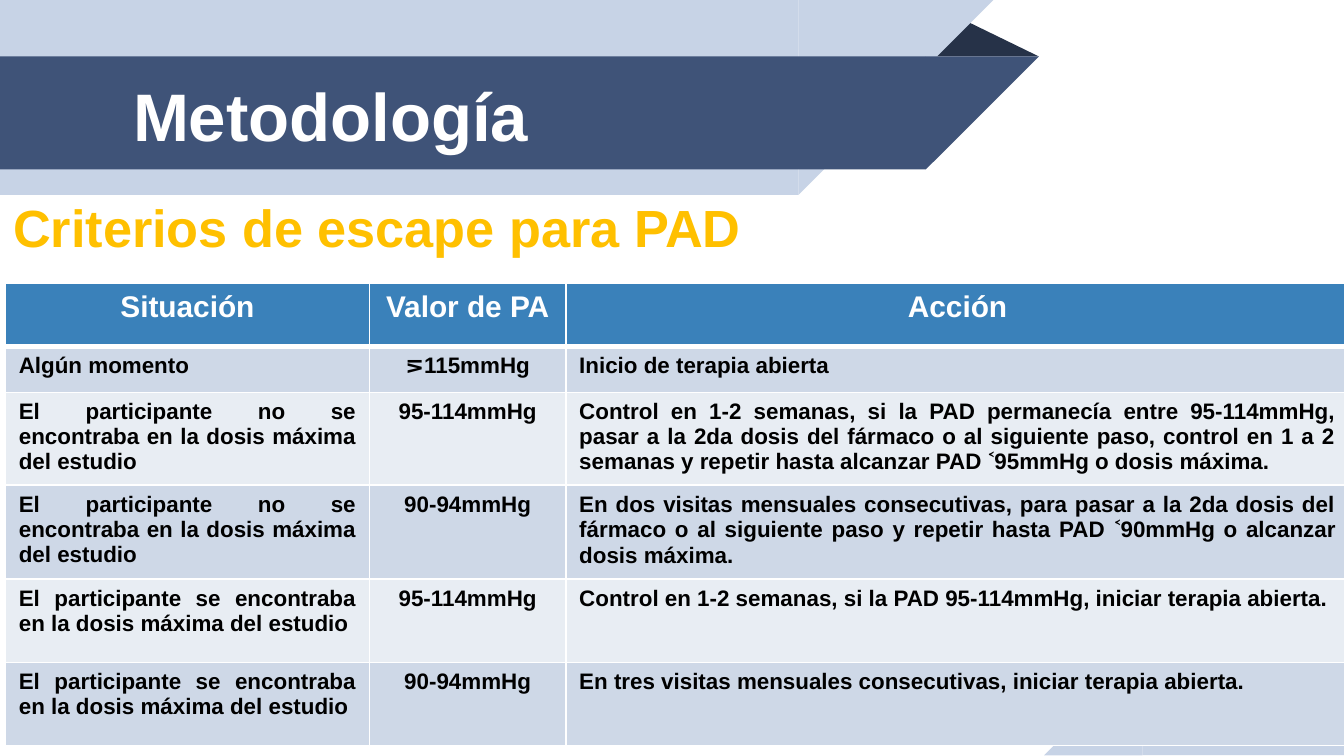
from lxml.etree import SubElement
from pptx import Presentation
from pptx.dml.color import RGBColor
from pptx.enum.shapes import MSO_SHAPE
from pptx.enum.text import MSO_ANCHOR, MSO_AUTO_SIZE, PP_ALIGN
from pptx.oxml.ns import qn
from pptx.util import Inches, Pt

WHITE = RGBColor(0xFF, 0xFF, 0xFF)
BLACK = RGBColor(0, 0, 0)
GOLD = RGBColor(0xFF, 0xC0, 0x00)
LIGHT_BLUE = RGBColor(0xC7, 0xD3, 0xE6)
DARK_BLUE = RGBColor(0x3F, 0x53, 0x78)
FOLD_BLUE = RGBColor(0x26, 0x32, 0x48)
HEADER_BLUE = RGBColor(0x3A, 0x81, 0xBA)
ROW_FILLS = (RGBColor(0xCE, 0xD8, 0xE7), RGBColor(0xE8, 0xED, 0xF3))

TITLE = "Metodología"
SUBTITLE = "Criterios de escape para PAD"
LESS_THAN = "˂"
BELOW_MAXIMUM = "El participante no se encontraba en la dosis máxima del estudio"
AT_MAXIMUM = "El participante se encontraba en la dosis máxima del estudio"
HEADER = ("Situación", "Valor de PA", "Acción")
CRITERIA = [
    ("Algún momento", "⋝115mmHg", "Inicio de terapia abierta"),
    (BELOW_MAXIMUM, "95-114mmHg",
     "Control en 1-2 semanas, si la PAD permanecía entre 95-114mmHg, pasar a la "
     "2da dosis del fármaco o al siguiente paso, control en 1 a 2 semanas y "
     "repetir hasta alcanzar PAD ˂95mmHg o dosis máxima."),
    (BELOW_MAXIMUM, "90-94mmHg",
     "En dos visitas mensuales consecutivas, para pasar a la 2da dosis del "
     "fármaco o al siguiente paso y repetir hasta PAD ˂90mmHg o alcanzar "
     "dosis máxima."),
    (AT_MAXIMUM, "95-114mmHg",
     "Control en 1-2 semanas, si la PAD 95-114mmHg, iniciar terapia abierta."),
    (AT_MAXIMUM, "90-94mmHg",
     "En tres visitas mensuales consecutivas, iniciar terapia abierta."),
]
COLUMN_WIDTHS = (2.71, 1.46, 5.83)
ROW_HEIGHTS = (0.47, 0.34, 0.69, 0.7, 0.62, 0.62)


def add_plain_shape(slide, kind, left, top, width, height, color):
    shape = slide.shapes.add_shape(
        kind, Inches(left), Inches(top), Inches(width), Inches(height))
    shape.shadow.inherit = False
    shape.fill.solid()
    shape.fill.fore_color.rgb = color
    shape.line.fill.background()
    return shape


def add_ribbon(slide, left, top, width, height, color, slant_at_right):
    """Draw a band whose slanted end is a right triangle as wide as it is high."""
    triangle_left = left + width if slant_at_right else left - height
    add_plain_shape(slide, MSO_SHAPE.RECTANGLE, left, top, width, height, color)
    triangle = add_plain_shape(slide, MSO_SHAPE.RIGHT_TRIANGLE,
                               triangle_left, top, height, height, color)
    triangle.element.spPr.xfrm.set("flipH", "1")
    if slant_at_right:
        triangle.rotation = 180


def set_font(paragraph, size, color):
    font = paragraph.font
    font.name, font.size, font.bold = "Arial", Pt(size), True
    font.color.rgb = color


def fill_heading(shape, text, size, color):
    frame = shape.text_frame
    frame.text = text
    frame.word_wrap = True
    frame.auto_size = MSO_AUTO_SIZE.NONE
    frame.vertical_anchor = MSO_ANCHOR.MIDDLE
    frame.margin_left = frame.margin_right = Inches(0.1)
    frame.margin_top = frame.margin_bottom = Inches(0.1)
    paragraph = frame.paragraphs[0]
    paragraph.alignment = PP_ALIGN.LEFT
    set_font(paragraph, size, color)


def set_borders(cell, bottom_width):
    properties = cell._tc.get_or_add_tcPr()
    for side, width in (("L", 1), ("R", 1), ("T", 1), ("B", bottom_width)):
        line = SubElement(properties, qn(f"a:ln{side}"), w=str(Pt(width)))
        fill = SubElement(line, qn("a:solidFill"))
        SubElement(fill, qn("a:srgbClr"), val=str(WHITE))


def fill_cell(cell, text, size, color, fill, alignment):
    cell.fill.solid()
    cell.fill.fore_color.rgb = fill
    paragraph = cell.text_frame.paragraphs[0]
    paragraph.alignment = alignment
    set_font(paragraph, size, color)
    before, sign, after = text.partition(LESS_THAN)
    for part in filter(None, (before, sign, after)):
        run = paragraph.add_run()
        run.text = part
        run.font.name = "Cambria" if part == LESS_THAN else "Arial"


def add_criteria_table(slide):
    table = slide.shapes.add_table(
        len(ROW_HEIGHTS), len(COLUMN_WIDTHS), Inches(0.04), Inches(2.11),
        Inches(sum(COLUMN_WIDTHS)), Inches(sum(ROW_HEIGHTS))).table
    for column, width in zip(table.columns, COLUMN_WIDTHS):
        column.width = Inches(width)
    for row, height in zip(table.rows, ROW_HEIGHTS):
        row.height = Inches(height)
    for column, text in enumerate(HEADER):
        cell = table.cell(0, column)
        set_borders(cell, bottom_width=3)
        fill_cell(cell, text, 16, WHITE, HEADER_BLUE, PP_ALIGN.CENTER)
    for row, texts in enumerate(CRITERIA):
        for column, text in enumerate(texts):
            alignment = PP_ALIGN.CENTER if column == 1 else PP_ALIGN.JUSTIFY
            fill_cell(table.cell(row + 1, column), text, 12, BLACK,
                      ROW_FILLS[row % 2], alignment)


def main():
    presentation = Presentation()
    presentation.slide_width = Inches(10)
    presentation.slide_height = Inches(10) * 9 // 16
    slide = presentation.slides.add_slide(presentation.slide_layouts[5])

    fold = add_plain_shape(slide, MSO_SHAPE.ISOSCELES_TRIANGLE,
                           6.88, 0.14, 0.85, 0.28, FOLD_BLUE)
    fold.adjustments[0] = 0.324
    add_ribbon(slide, 0, 0, 5.94, 1.45, LIGHT_BLUE, slant_at_right=True)
    add_ribbon(slide, 0, 0.42, 6.89, 0.84, DARK_BLUE, slant_at_right=True)
    add_ribbon(slide, 8.5, 4.89, 1.5, 0.73, LIGHT_BLUE, slant_at_right=False)

    title = slide.shapes.title
    title.left, title.top = Inches(0.89), Inches(0.43)
    title.width, title.height = Inches(6.01), Inches(0.84)
    fill_heading(title, TITLE, 36, WHITE)
    title.element.getparent().append(title.element)  # bring in front of the ribbons

    subtitle = slide.shapes.add_textbox(
        Inches(0), Inches(1.27), Inches(6.85), Inches(0.84))
    fill_heading(subtitle, SUBTITLE, 28, GOLD)
    add_criteria_table(slide)
    presentation.save("out.pptx")


if __name__ == "__main__":
    main()
